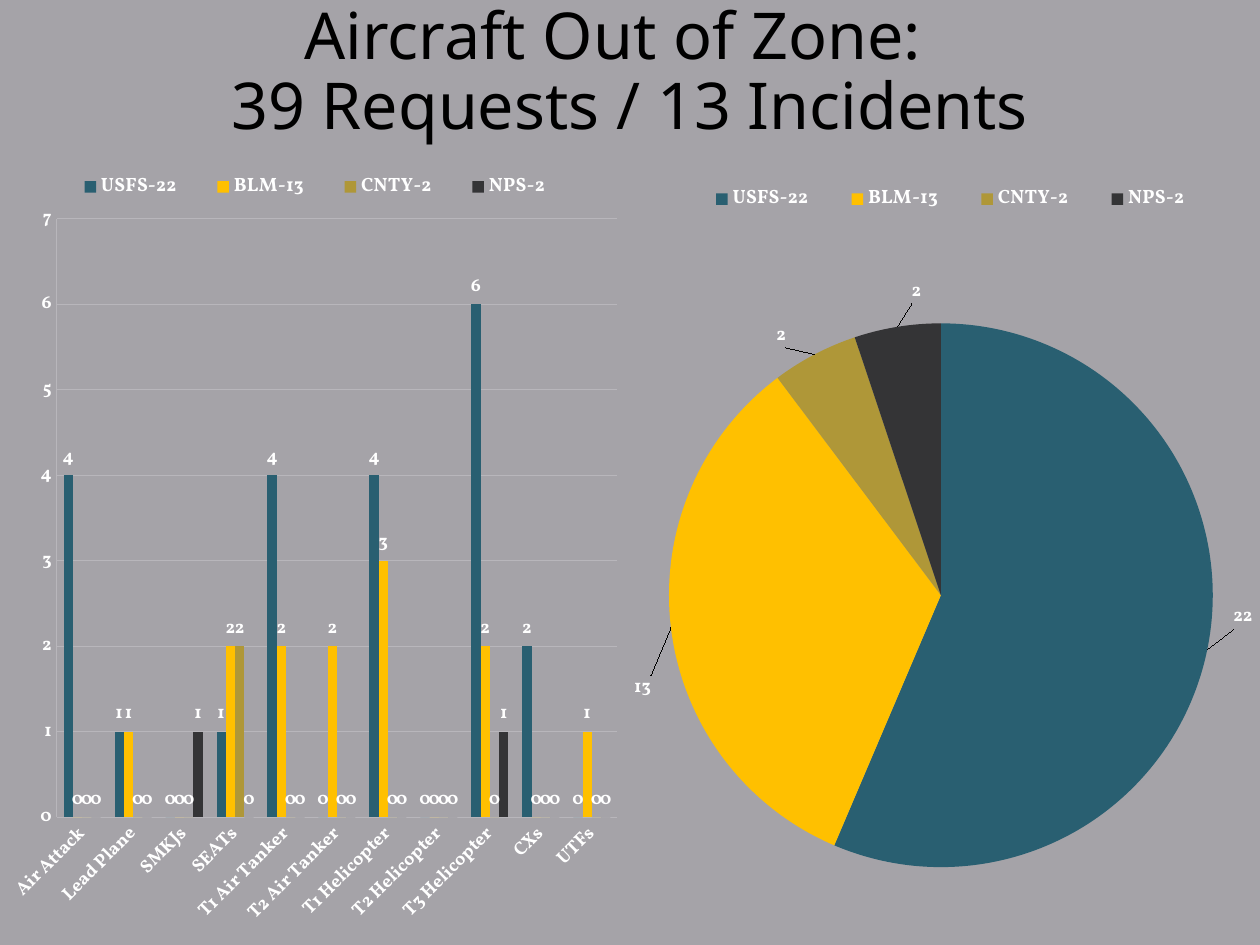
from lxml.etree import SubElement, QName
from pptx import Presentation
from pptx.chart.data import CategoryChartData as Data
from pptx.dml.color import RGBColor as RGB
from pptx.enum.chart import (XL_CHART_TYPE as Kind, XL_LABEL_POSITION as Spot,
                             XL_LEGEND_POSITION as Side, XL_TICK_MARK as Tick)
from pptx.enum.text import MSO_ANCHOR as Anchor, PP_ALIGN as Align
from pptx.oxml.ns import qn
from pptx.util import Pt

TITLE = "Aircraft Out of Zone:  \v39 Requests / 13 Incidents"
TYPES = ["Air Attack", "Lead Plane", "SMKJs", "SEATs", "T1 Air Tanker",
         "T2 Air Tanker", "T1 Helicopter", "T2 Helicopter", "T3 Helicopter",
         "CXs", "UTFs"]
AGENCIES = {
    "USFS-22": [4, 1, 0, 1, 4, 0, 4, 0, 6, 2, 0],
    "BLM-13": [0, 1, 0, 2, 2, 2, 3, 0, 2, 0, 1],
    "CNTY-2": [0, 0, 0, 2, 0, 0, 0, 0, 0, 0, 0],
    "NPS-2": [0, 0, 1, 0, 0, 0, 0, 0, 1, 0, 0],
}
SHIFTS = [(0.03, -0.06), (-0.02, 0.06), (-0.04, 0), (0.04, -0.02)]
THEME = {
    "back": "A5A3A8", "ink": "000000", "text": "FFFFFF", "grid": "B8B6BB",
    "fills": ["295F71", "FFC000", "AF9738", "343436"],
    "head": "Noto Sans", "body": "Vollkorn",
    "title": 36.9, "label": 10.5, "legend": 11,
}


def tint(fill, code):
    fill.solid()
    fill.fore_color.rgb = RGB.from_string(code)


def style(font, size, color="text", face="body", bold=True):
    font.size = Pt(THEME[size])
    font.name = THEME[face]
    font.bold = bold
    font.color.rgb = RGB.from_string(THEME[color])


def place(node, after, tags, inner=False):
    for old in node.findall(qn("c:layout")):
        node.remove(old)
    layout = SubElement(node, qn("c:layout"))
    node.insert(after, layout)
    manual = SubElement(layout, qn("c:manualLayout"))
    if inner:
        SubElement(manual, qn("c:layoutTarget"), val="inner")
    for tag, val in tags.items():
        SubElement(manual, qn("c:" + tag), val=str(val))


def frame(x, y, w, h):
    return {"xMode": "edge", "yMode": "edge", "x": x, "y": y, "w": w, "h": h}


def add_chart(slide, kind, cats, rows, box, plot, key):
    data = Data(number_format="General")
    data.categories = cats
    for name, vals in rows.items():
        data.add_series(name, vals)
    chart = slide.shapes.add_chart(kind, *map(Pt, box), data).chart
    chart.has_title = False
    style(chart.font, "label")
    chart.has_legend = True
    legend = chart.legend
    legend.position = Side.TOP
    legend.include_in_layout = False
    style(legend.font, "legend")
    place(chart.plots[0]._element.getparent(), 0, frame(*plot), True)
    node = legend._element
    names = [QName(child).localname for child in node]
    place(node, names.index("legendPos") + 1, frame(*key))
    for series in chart.plots[0].series:
        labels = series.data_labels
        labels.show_value = True
        labels.position = Spot.OUTSIDE_END
        style(labels.font, "label")
    return chart


def add_bars(slide):
    chart = add_chart(slide, Kind.COLUMN_CLUSTERED, TYPES, AGENCIES,
                      (0, 84, 360, 456), (0.09, 0.09, 0.89, 0.75),
                      (0.08, 0.03, 0.84, 0.04))
    plot = chart.plots[0]
    plot.vary_by_categories = False
    plot.gap_width, plot.overlap = 150, 0
    for series, code in zip(plot.series, THEME["fills"]):
        tint(series.format.fill, code)
    rule = RGB.from_string(THEME["grid"])
    value, cat = chart.value_axis, chart.category_axis
    value.minimum_scale, value.maximum_scale, value.major_unit = 0, 7, 1
    value.has_major_gridlines = True
    for axis in (value, cat):
        axis.major_tick_mark = axis.minor_tick_mark = Tick.NONE
        style(axis.tick_labels.font, "label")
    for part in (value, cat, value.major_gridlines):
        part.format.line.color.rgb = rule
        part.format.line.width = Pt(0.75)
    cat._element.find(qn("c:txPr")).find(qn("a:bodyPr")).set("rot", "-2700000")


def add_pie(slide):
    totals = [sum(vals) for vals in AGENCIES.values()]
    chart = add_chart(slide, Kind.PIE, list(AGENCIES), {"Series 1": totals},
                      (359.5, 96, 360, 444), (0.06, 0.2, 0.87, 0.7),
                      (0.08, 0.02, 0.86, 0.04))
    plot = chart.plots[0]
    plot.vary_by_categories = True
    series = plot.series[0]
    for i, (code, (dx, dy)) in enumerate(zip(THEME["fills"], SHIFTS)):
        point = series.points[i]
        tint(point.format.fill, code)
        style(point.data_label.font, "label")
        point.data_label.position = Spot.OUTSIDE_END
    marks = series.data_labels._element.findall(qn("c:dLbl"))
    for mark, (dx, dy) in zip(marks, SHIFTS):
        place(mark, 1, {"x": dx, "y": dy})


def add_title(slide):
    frame = slide.shapes.add_textbox(Pt(0), Pt(12), Pt(720), Pt(60)).text_frame
    frame.word_wrap = True
    frame.vertical_anchor = Anchor.MIDDLE
    para = frame.paragraphs[0]
    para.text = TITLE
    para.alignment = Align.CENTER
    para.line_spacing = 0.9
    style(para.font, "title", "ink", "head", False)


def main():
    deck = Presentation()
    deck.slide_width, deck.slide_height = Pt(720), Pt(540)
    slide = deck.slides.add_slide(deck.slide_layouts[6])
    tint(slide.background.fill, THEME["back"])
    add_title(slide)
    add_pie(slide)
    add_bars(slide)
    deck.save("out.pptx")


if __name__ == "__main__":
    main()
